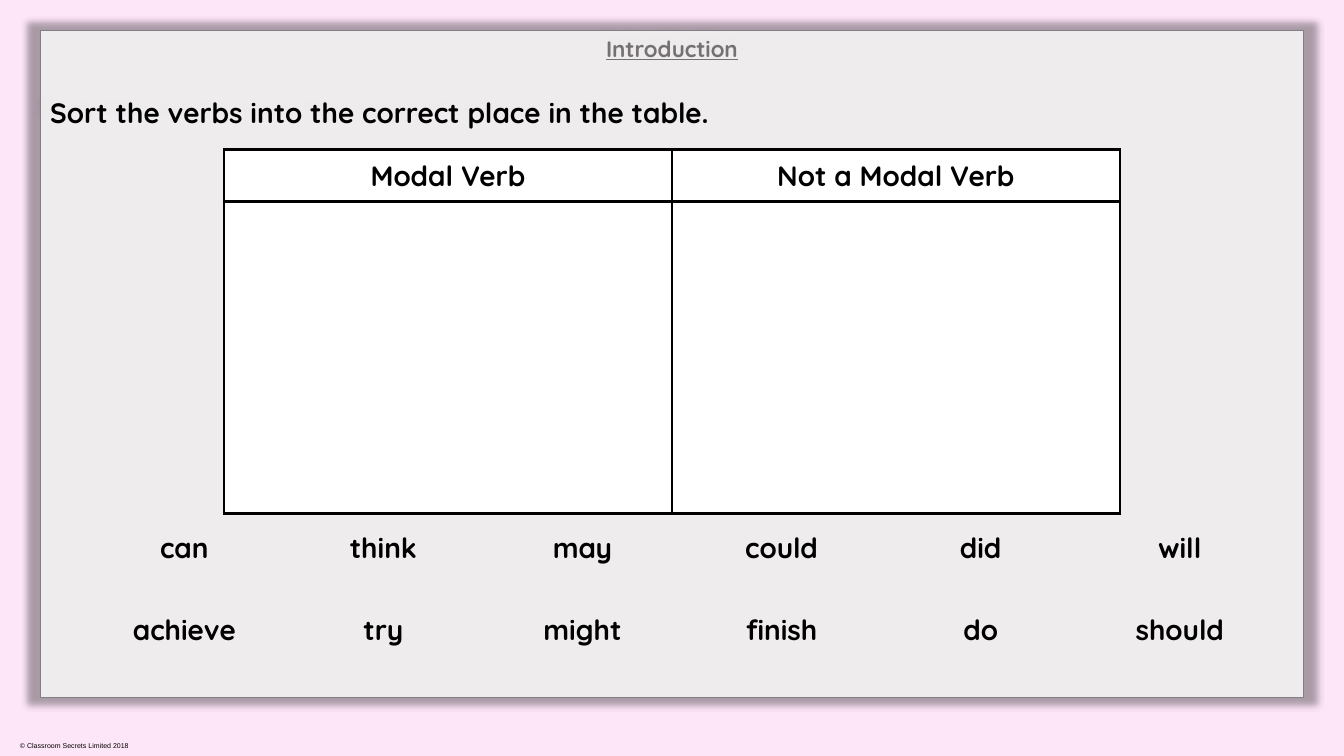
from dataclasses import dataclass

from lxml import etree
from pptx import Presentation
from pptx.dml.color import RGBColor
from pptx.enum import shapes, text
from pptx.oxml import ns
from pptx.util import Pt


@dataclass(frozen=True)
class Theme:
    font: str = "Quicksand"
    small_font: str = "Arial"
    background: str = "FEE6F9"
    white: str = "FFFFFF"
    ink: str = "000000"
    heading: str = "767171"
    panel_line: str = "808080"
    body_size: int = 20
    heading_size: int = 16
    copyright_size: int = 5
    border: float = 2.25


THEME = Theme()
SLIDE_WIDTH, SLIDE_HEIGHT = 960, 540
HEADINGS = ("Modal Verb", "Not a Modal Verb")
VERBS = (
    ("can", "think", "may", "could", "did", "will"),
    ("achieve", "try", "might", "finish", "do", "should"),
)


def rgb(value):
    return RGBColor.from_string(value)


def add_element(parent, tag, **attributes):
    element = etree.SubElement(parent, ns.qn(tag))
    for name, value in attributes.items():
        element.set(name, str(value))
    return element


def write(paragraph, words, size=THEME.body_size, color=THEME.ink, font=THEME.font,
          bold=True, align=text.PP_ALIGN.CENTER):
    paragraph.text = words
    paragraph.alignment = align
    paragraph.font.name = font
    paragraph.font.size = Pt(size)
    paragraph.font.bold = bold
    paragraph.font.color.rgb = rgb(color)


def add_label(slide, words, left, top, width, height, **style):
    box = slide.shapes.add_textbox(Pt(left), Pt(top), Pt(width), Pt(height))
    box.text_frame.word_wrap = True
    write(box.text_frame.paragraphs[0], words, **style)


def add_glow(shape):
    """Give the shape a soft, centred shadow slightly larger than itself."""
    shape.shadow.inherit = False
    effects = shape._element.spPr.find(ns.qn("a:effectLst"))
    shadow = add_element(effects, "a:outerShdw", blurRad=Pt(5), sx=102000, sy=102000,
                         algn="ctr", rotWithShape=0)
    color = add_element(shadow, "a:srgbClr", val=THEME.ink)
    add_element(color, "a:alpha", val=40000)


def add_panel(slide):
    panel = slide.shapes.add_shape(
        shapes.MSO_SHAPE.RECTANGLE, Pt(28.8), Pt(21.6), Pt(902.4), Pt(476.6))
    panel.fill.solid()
    panel.fill.fore_color.rgb = rgb(THEME.white)
    fill_color = panel._element.spPr.find(ns.qn("a:solidFill"))[0]
    add_element(fill_color, "a:alpha", val=82000)
    panel.line.color.rgb = rgb(THEME.panel_line)
    panel.line.width = Pt(1)
    add_glow(panel)

    frame = panel.text_frame
    frame.vertical_anchor = text.MSO_ANCHOR.TOP
    heading = frame.paragraphs[0]
    write(heading, "Introduction", size=THEME.heading_size, color=THEME.heading)
    heading.font.underline = True
    task = frame.add_paragraph()
    write(task, "Sort the verbs into the correct place in the table.",
          align=text.PP_ALIGN.LEFT)
    task.space_before = Pt(24)


def style_cell(cell):
    properties = cell._tc.get_or_add_tcPr()
    for side in ("a:lnL", "a:lnR", "a:lnT", "a:lnB"):
        line = add_element(properties, side, w=Pt(THEME.border))
        add_element(add_element(line, "a:solidFill"), "a:srgbClr", val=THEME.ink)
    cell.fill.solid()
    cell.fill.fore_color.rgb = rgb(THEME.white)
    cell.vertical_anchor = text.MSO_ANCHOR.MIDDLE
    cell.margin_left = cell.margin_right = Pt(9.4)


def add_sorting_table(slide):
    width, row_heights = 640, (37, 223)
    table = slide.shapes.add_table(
        len(row_heights), len(HEADINGS), Pt((SLIDE_WIDTH - width) / 2), Pt(107),
        Pt(width), Pt(sum(row_heights))).table
    for row, height in zip(table.rows, row_heights):
        row.height = Pt(height)
    for cell in table.iter_cells():
        style_cell(cell)
    for column, heading in enumerate(HEADINGS):
        write(table.cell(0, column).text_frame.paragraphs[0], heading)


def add_verbs(slide):
    left, top, column_step, row_step = 43.2, 375.4, 142.2, 58.2
    for row, verbs in enumerate(VERBS):
        for column, verb in enumerate(verbs):
            add_label(slide, verb, left + column * column_step, top + row * row_step,
                      177, 32)


def main():
    presentation = Presentation()
    presentation.slide_width = Pt(SLIDE_WIDTH)
    presentation.slide_height = Pt(SLIDE_HEIGHT)
    slide = presentation.slides.add_slide(presentation.slide_layouts[6])
    slide.background.fill.solid()
    slide.background.fill.fore_color.rgb = rgb(THEME.background)

    add_label(slide, "© Classroom Secrets Limited 2018", 7.2, 526.3, 124.6, 13.7,
              size=THEME.copyright_size, font=THEME.small_font, bold=False,
              align=text.PP_ALIGN.LEFT)
    add_panel(slide)
    add_sorting_table(slide)
    add_verbs(slide)
    presentation.save("out.pptx")


if __name__ == "__main__":
    main()
